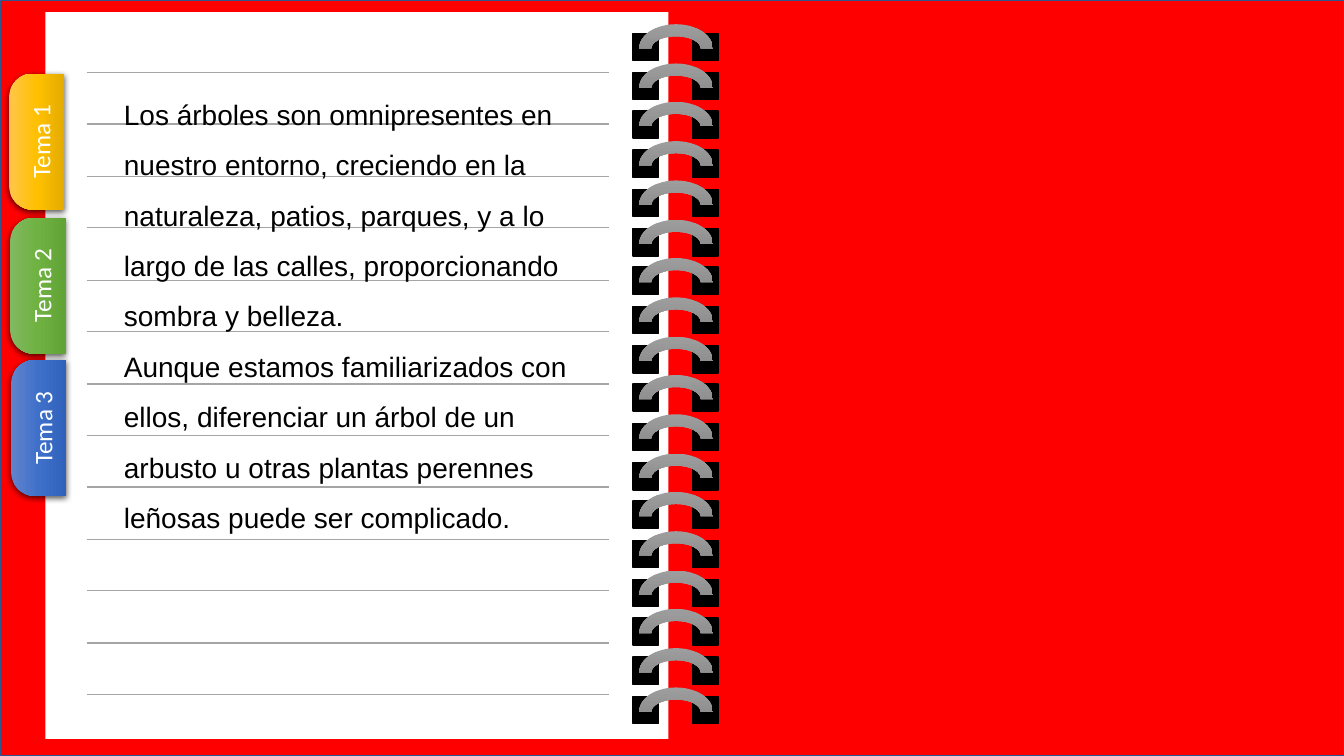
from copy import deepcopy

from lxml import etree
from pptx import Presentation
from pptx import util as u
from pptx.dml.color import RGBColor
from pptx.enum import shapes, text
from pptx.oxml.ns import qn

COLORS = {
    "cover": "FF0000", "cover_edge": "325491", "page": "FFFFFF",
    "rule": "A5A5A5", "hole": "000000", "ink": "000000", "tab_text": "FFFFFF",
    "ring": ["9D9D9D", "909090", "7C7C7C"],
    "Tema 1": ["FFC64B", "FFC000", "E3AB00"],
    "Tema 2": ["81B861", "6FB242", "62A336"],
    "Tema 3": ["6183CB", "3E70CA", "3062BB"],
}
SHAPE = shapes.MSO_SHAPE
STORY = [
    "Los árboles son omnipresentes en nuestro entorno, creciendo en la "
    "naturaleza, patios, parques, y a lo largo de las calles, "
    "proporcionando sombra y belleza.",
    "Aunque estamos familiarizados con ellos, diferenciar un árbol de un "
    "arbusto u otras plantas perennes leñosas puede ser complicado.",
]


def px(length):
    return u.Emu(length * 9144)


def rgb(name):
    return RGBColor.from_string(COLORS[name])


class Notebook:
    """Draws the parts of a spiral notebook on one slide."""

    def __init__(self, slide):
        self.slide = slide
        self.layer = slide.shapes

    def start_group(self):
        self.layer = self.slide.shapes.add_group_shape().shapes

    def end_group(self):
        self.layer = self.slide.shapes

    def shape(self, kind, left, top, width, height):
        part = self.layer.add_shape(kind, px(left), px(top), px(width), px(height))
        part.shadow.inherit = False
        part.line.fill.background()
        return part

    def panel(self, left, top, width, height, fill, edge=None):
        panel = self.shape(SHAPE.RECTANGLE, left, top, width, height)
        panel.fill.solid()
        panel.fill.fore_color.rgb = rgb(fill)
        if edge:
            panel.line.color.rgb = rgb(edge)
            panel.line.width = u.Pt(1)

    def shade(self, part, name):
        part.fill.gradient()
        part.fill.gradient_angle = 270
        stops = part._element.spPr.find(".//" + qn("a:gsLst"))
        stops.insert(1, deepcopy(stops[0]))
        for stop, position, color in zip(part.fill.gradient_stops, (0, 0.5, 1), COLORS[name]):
            stop.position = position
            stop.color.rgb = RGBColor.from_string(color)

    def rule(self, left, right, y):
        rule = self.layer.add_connector(
            shapes.MSO_CONNECTOR.STRAIGHT, px(left), px(y), px(right), px(y))
        rule.line.color.rgb = rgb("rule")
        rule.line.width = u.Pt(1)
        etree.SubElement(rule._element.spPr, qn("a:effectLst"))

    def ring(self, top):
        for hole_left in (687, 628):
            self.panel(hole_left, top + 9, 25, 27, "hole", "hole")
        self.shade(self.shape(SHAPE.BLOCK_ARC, 634, top, 73, 48), "ring")

    def drop_shadow(self, part):
        effects = part._element.spPr.find(qn("a:effectLst"))
        shadow = etree.SubElement(
            effects, qn("a:outerShdw"), blurRad="57150", dist="19050",
            dir="5400000", algn="ctr", rotWithShape="0")
        color = etree.SubElement(shadow, qn("a:srgbClr"), val="000000")
        etree.SubElement(color, qn("a:alpha"), val="63000")

    def style_text(self, paragraph, font, size, color):
        for run in paragraph.runs:
            run.font.name = font
            run.font.size = u.Pt(size)
            run.font.color.rgb = rgb(color)

    def tab(self, left, top, label):
        tab = self.shape(SHAPE.ROUND_2_SAME_RECTANGLE, left, top, 135, 55)
        tab.adjustments[0] = 0.43
        tab.adjustments[1] = 0
        tab.rotation = 270
        tab._element.spPr.find(qn("a:xfrm")).set("flipH", "1")
        self.shade(tab, label)
        self.drop_shadow(tab)
        tab.text_frame.text = label
        tab.text_frame.vertical_anchor = text.MSO_ANCHOR.MIDDLE
        caption = tab.text_frame.paragraphs[0]
        caption.alignment = text.PP_ALIGN.CENTER
        self.style_text(caption, "Calibri", 18, "tab_text")

    def story(self, left, top, width, height, passages):
        frame = self.layer.add_textbox(px(left), px(top), px(width), px(height)).text_frame
        frame.word_wrap = True
        frame.auto_size = text.MSO_AUTO_SIZE.SHAPE_TO_FIT_TEXT
        frame.text = "\n".join(passages)
        for passage in frame.paragraphs:
            passage.line_spacing = 1.5
            self.style_text(passage, "Arial", 20, "ink")


def main():
    deck = Presentation()
    deck.slide_width, deck.slide_height = px(1333), px(750)
    notebook = Notebook(deck.slides.add_slide(deck.slide_layouts[6]))

    notebook.panel(0, 0, 1333, 750, "cover", "cover_edge")
    notebook.panel(45, 12, 618, 721, "page")

    notebook.start_group()
    for row in range(13):
        notebook.rule(86, 604, round(72 + row * 51.42))

    notebook.start_group()
    for row in range(18):
        notebook.ring(round(24 + row * 38.7))
    notebook.end_group()

    for left, top, label in ((-31, 113, "Tema 1"), (-30, 256, "Tema 2"), (-29, 397, "Tema 3")):
        notebook.tab(left, top, label)
    notebook.story(113, 75, 478, 458, STORY)

    deck.save("out.pptx")


if __name__ == "__main__":
    main()
